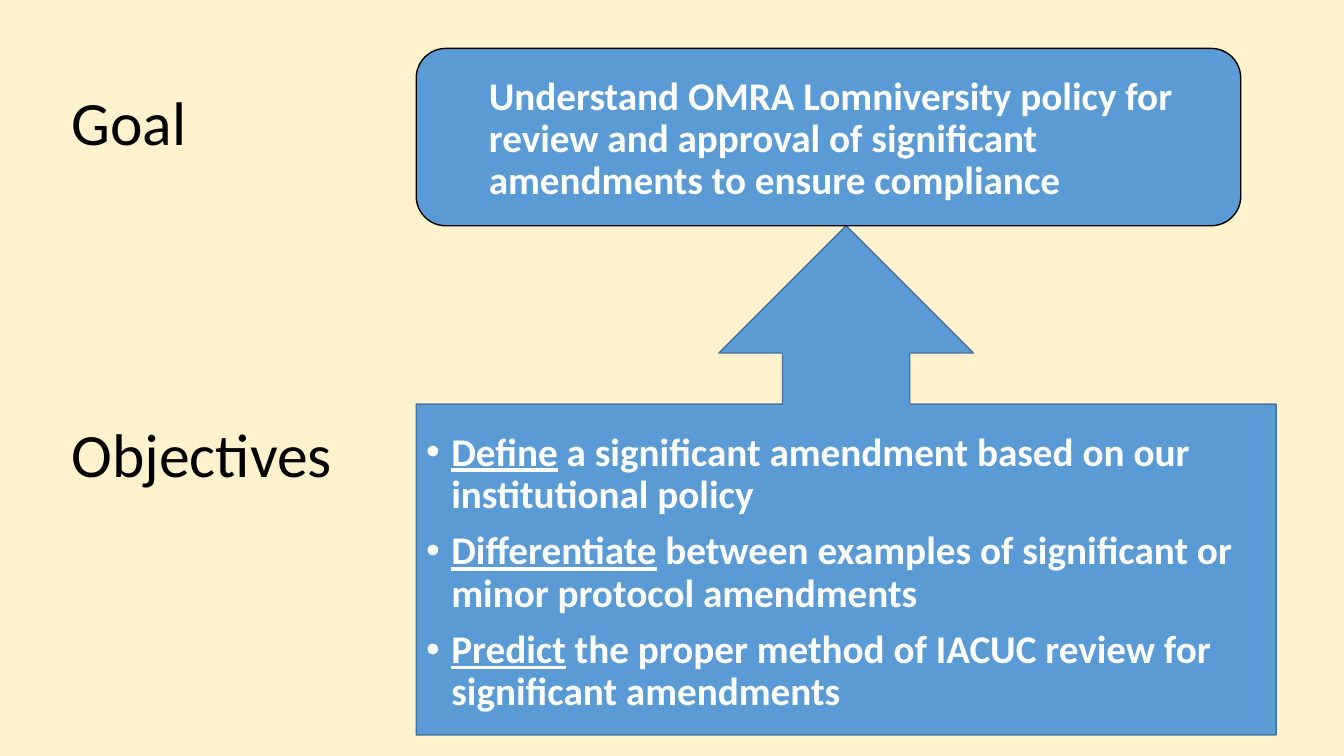
"""Build a slide that links training objectives to their goal."""
from lxml import etree
from pptx import Presentation
from pptx import util as u
from pptx.dml.color import RGBColor
from pptx.enum import shapes, text
from pptx.oxml.ns import qn


def colour(value):
    return RGBColor.from_string(value)


def add_run(paragraph, words, size, shade, bold=False, underline=False):
    run = paragraph.add_run()
    run.text = words
    run.font.name = "Calibri"
    run.font.size = u.Pt(size)
    run.font.color.rgb = colour(shade)
    run.font.bold = bold
    run.font.underline = underline
    paragraph.line_spacing = 0.9
    paragraph.alignment = text.PP_ALIGN.LEFT


deck = Presentation()
deck.slide_width, deck.slide_height = u.Cm(33.87), u.Cm(19.05)
slide = deck.slides.add_slide(deck.slide_layouts[5])
slide.background.fill.solid()
slide.background.fill.fore_color.rgb = colour("FFF2CC")

panels = [
    (shapes.MSO_SHAPE.UP_ARROW_CALLOUT, 5.69, 21.67, 12.83, "43739E"),
    (shapes.MSO_SHAPE.ROUNDED_RECTANGLE, 1.22, 20.78, 4.47, "000000"),
]
for kind, top, width, height, outline in panels:
    panel = slide.shapes.add_shape(kind, u.Cm(10.49), u.Cm(top), u.Cm(width), u.Cm(height))
    panel.shadow.inherit = False
    panel.fill.solid()
    panel.fill.fore_color.rgb = colour("5B9BD5")
    panel.line.color.rgb = colour(outline)
    panel.line.width = u.Pt(1)

goal = slide.shapes.title
goal.left, goal.top, goal.width, goal.height = u.Cm(1.55), u.Cm(1.65), u.Cm(12.12), u.Cm(3.02)
goal.text_frame.vertical_anchor = text.MSO_ANCHOR.MIDDLE
add_run(goal.text_frame.paragraphs[0], "Goal", 44, "000000")

frames = []
for left, top, width, height in [
    (1.55, 10.57, 9.63, 2.57),
    (12.07, 1.8, 19.63, 5.13),
    (10.49, 10.77, 21.56, 7.39),
]:
    box = slide.shapes.add_textbox(u.Cm(left), u.Cm(top), u.Cm(width), u.Cm(height))
    box.text_frame.word_wrap = True
    frames.append(box.text_frame)
heading, policy, objectives = frames

add_run(heading.paragraphs[0], "Objectives", 44, "000000")
add_run(
    policy.paragraphs[0],
    "Understand OMRA Lomniversity policy for review and approval of "
    "significant amendments to ensure compliance",
    28, "FFFFFF", bold=True,
)

aims = [
    ("Define", " a significant amendment based on our institutional policy"),
    ("Differentiate", " between examples of significant or minor protocol amendments"),
    ("Predict", " the proper method of IACUC review for significant amendments"),
]
for index, (verb, rest) in enumerate(aims):
    aim = objectives.add_paragraph() if index else objectives.paragraphs[0]
    add_run(aim, verb, 28, "FFFFFF", bold=True, underline=True)
    add_run(aim, rest, 28, "FFFFFF", bold=True)
    aim.space_before = u.Pt(10)
    properties = aim._p.get_or_add_pPr()
    properties.set("marL", str(u.Cm(0.635)))
    properties.set("indent", str(-u.Cm(0.635)))
    etree.SubElement(properties, qn("a:buFont"), typeface="Arial")
    etree.SubElement(properties, qn("a:buChar"), char="•")

deck.save("out.pptx")
